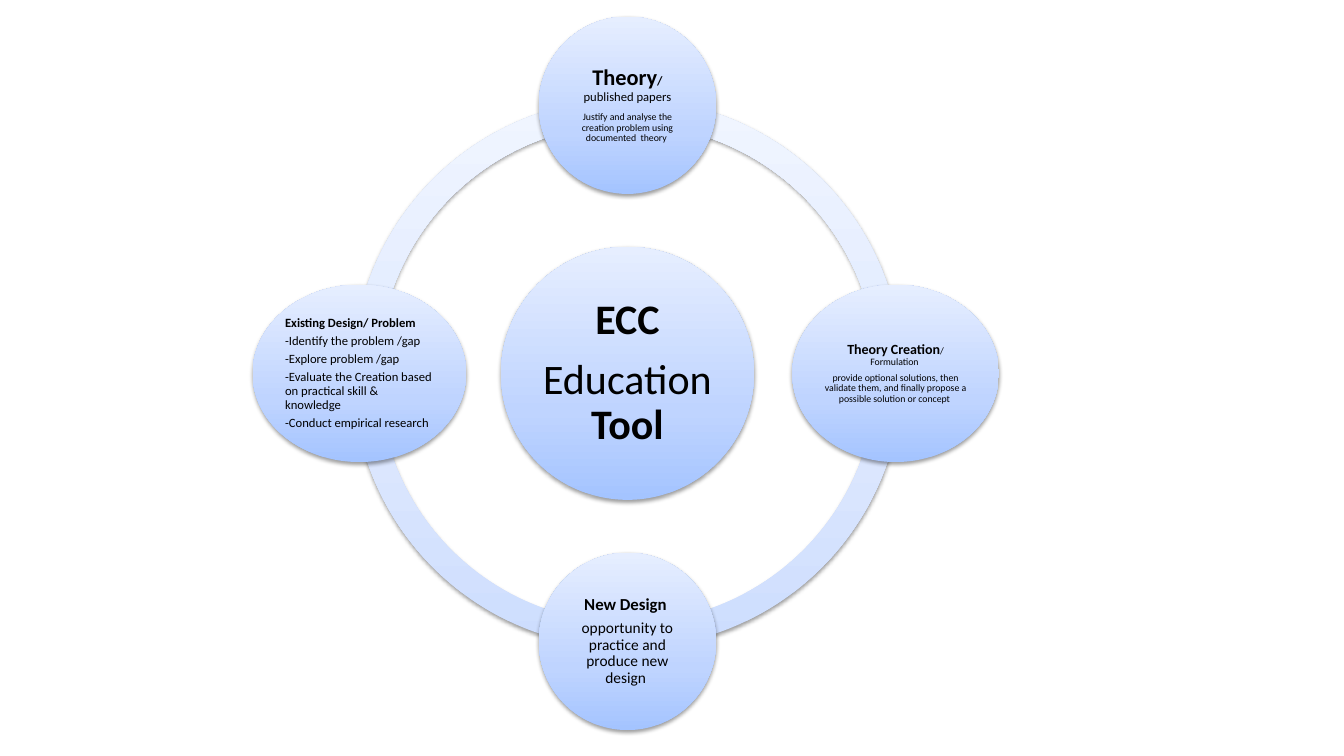
from copy import deepcopy
from math import cos, radians, sin

from lxml import etree
from pptx import Presentation
from pptx.dml import color
from pptx.enum import shapes, text
from pptx.oxml import ns
from pptx.util import Pt

HUES = {
    "text": "000000",
    "shade": "000000",
    "ring": ["CDDDFE", "DBE6FE", "F0F5FF"],
    "node": ["A4C4FF", "BFD4FF", "E6EEFF"],
}
STOPS = [0, 0.35, 1]
MID_X, MID_Y = 448.2, 266.7
ORBIT = 191.5
RING = 392.4
HUB = 180.7
NODE = 126.7

CORE = [
    [("ECC", 30, True)],
    [("Education ", 30, False), ("Tool", 30, True)],
]
THEORY = [
    [("Theory", 16, True), ("/ ", 9, True), ("published papers", 9, False)],
    [("Justify and analyse the creation problem using documented  theory ", 7, False)],
]
CREATE = [
    [("Theory Creation", 10, True), ("/ Formulation ", 7, False)],
    [("provide optional solutions, then validate them, and finally propose "
      "a possible solution or concept ", 7, False)],
]
DESIGN = [
    [("New Design ", 12, True)],
    [("opportunity to practice and produce new design ", 11, False)],
]
PROBLEM = [
    [("Existing Design/ Problem", 9, True)],
    [("-Identify the problem /gap", 9, False)],
    [("-Explore problem /gap", 9, False)],
    [("-Evaluate the Creation based on practical skill & knowledge", 9, False)],
    [("-Conduct empirical research", 9, False)],
]


def add_shade(shape):
    shape.shadow.inherit = False
    effects = shape._element.spPr.find(ns.qn("a:effectLst"))
    outer = etree.SubElement(
        effects, ns.qn("a:outerShdw"), blurRad=str(Pt(3.1)),
        dist=str(Pt(1.6)), dir="5400000", rotWithShape="0")
    tint = etree.SubElement(outer, ns.qn("a:srgbClr"), val=HUES["shade"])
    etree.SubElement(tint, ns.qn("a:alpha"), val="38000")


def add_blend(shape, hues):
    shape.fill.gradient()
    shape.fill.gradient_angle = 90
    stops = shape._element.spPr.find(".//" + ns.qn("a:gsLst"))
    stops.insert(1, deepcopy(stops[0]))
    for stop, place, hue in zip(shape.fill.gradient_stops, STOPS, hues):
        stop.position = place
        stop.color.rgb = color.RGBColor.from_string(hue)


def add_form(slide, kind, x, y, wide, high, hues):
    shape = slide.shapes.add_shape(
        kind, Pt(x - wide / 2), Pt(y - high / 2), Pt(wide), Pt(high))
    add_blend(shape, hues)
    shape.line.fill.background()
    add_shade(shape)
    return shape


def add_arc(slide, start, end):
    arc = add_form(slide, shapes.MSO_SHAPE.BLOCK_ARC, MID_X, MID_Y,
                   RING, RING, HUES["ring"])
    for i, value in enumerate([start * 0.6, end * 0.6, 0.046]):
        arc.adjustments[i] = value


def add_text(shape, paras, align, inset):
    frame = shape.text_frame
    frame.word_wrap = True
    frame.vertical_anchor = text.MSO_ANCHOR.MIDDLE
    frame.margin_left = frame.margin_right = Pt(inset)
    frame.margin_top = frame.margin_bottom = Pt(inset)
    for i, runs in enumerate(paras):
        para = frame.add_paragraph() if i else frame.paragraphs[0]
        para.alignment = align
        para.line_spacing = 0.9
        para.space_after = Pt(runs[0][1] * 0.35)
        for words, size, bold in runs:
            run = para.add_run()
            run.text = words
            run.font.name = "Calibri"
            run.font.size = Pt(size)
            run.font.bold = bold
            run.font.color.rgb = color.RGBColor.from_string(HUES["text"])


def add_node(slide, x, y, wide, high, paras, inset,
             align=text.PP_ALIGN.CENTER):
    node = add_form(slide, shapes.MSO_SHAPE.OVAL, x, y, wide, high, HUES["node"])
    add_text(node, paras, align, inset)


def main():
    deck = Presentation()
    deck.slide_width, deck.slide_height = Pt(960), Pt(540)
    slide = deck.slides.add_slide(deck.slide_layouts[6])
    for start in (180, 90, 0, 270):
        add_arc(slide, start, (start + 90) % 360)
    add_node(slide, MID_X, MID_Y, HUB, HUB, CORE, 3)
    center, left = text.PP_ALIGN.CENTER, text.PP_ALIGN.LEFT
    nodes = [
        (270, NODE, THEORY, 1.6, center),
        (0, 147.6, CREATE, 0.9, center),
        (90, NODE, DESIGN, 1.2, center),
        (180, 152.6, PROBLEM, 0.9, left),
    ]
    for angle, wide, paras, inset, align in nodes:
        turn = radians(angle)
        add_node(slide, MID_X + ORBIT * cos(turn), MID_Y + ORBIT * sin(turn),
                 wide, NODE, paras, inset, align)
    deck.save("out.pptx")


if __name__ == "__main__":
    main()
